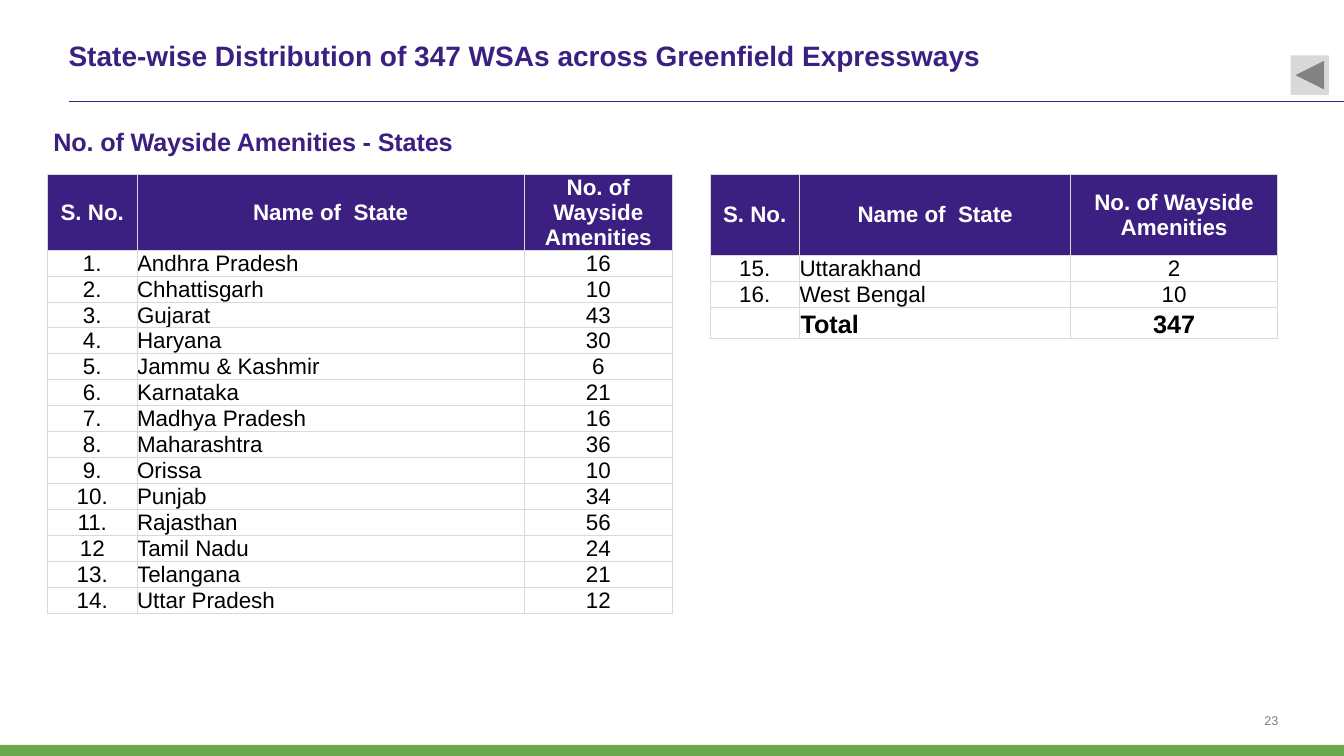
from lxml import etree
from pptx import Presentation
from pptx.dml.color import RGBColor
from pptx.enum import shapes, text
from pptx.oxml import ns
from pptx.util import Inches, Pt

PURPLE, GREEN, GRID, GREY = "3B2082", "6AA84F", "D9D9D9", "808080"
WHITE, BLACK = "FFFFFF", "000000"
LEFT, MID, RIGHT = text.PP_ALIGN.LEFT, text.PP_ALIGN.CENTER, text.PP_ALIGN.RIGHT
TOP, CENTER, BASE = text.MSO_ANCHOR.TOP, text.MSO_ANCHOR.MIDDLE, text.MSO_ANCHOR.BOTTOM

HEAD = ["S. No.", "Name of  State", "No. of Wayside Amenities"]
STATES = [
    ("Andhra Pradesh", 16), ("Chhattisgarh", 10), ("Gujarat", 43),
    ("Haryana", 30), ("Jammu & Kashmir", 6), ("Karnataka", 21),
    ("Madhya Pradesh", 16), ("Maharashtra", 36), ("Orissa", 10),
    ("Punjab", 34), ("Rajasthan", 56), ("Tamil Nadu", 24),
    ("Telangana", 21), ("Uttar Pradesh", 12), ("Uttarakhand", 2),
    ("West Bengal", 10),
]


def color(code):
    return RGBColor.from_string(code)


def paint(item, code):
    item.fill.solid()
    item.fill.fore_color.rgb = color(code)


def place(item, box):
    for key, size in zip(("left", "top", "width", "height"), box):
        setattr(item, key, Inches(size))


def write(frame, words, size, code, bold=False, align=LEFT):
    par = frame.paragraphs[0]
    par.alignment = align
    run = par.add_run()
    run.text = words
    look = {"name": "Arial", "size": Pt(size), "bold": bold}
    for key, value in look.items():
        setattr(run.font, key, value)
    run.font.color.rgb = color(code)
    return run


def setup(frame, anchor, inset=0):
    look = {"word_wrap": True, "auto_size": text.MSO_AUTO_SIZE.NONE,
            "vertical_anchor": anchor}
    look |= {f"margin_{side}": Inches(inset)
             for side in ("left", "top", "right", "bottom")}
    for key, value in look.items():
        setattr(frame, key, value)


def label(slide, box, anchor, inset=0):
    frame = slide.shapes.add_textbox(*map(Inches, box)).text_frame
    setup(frame, anchor, inset)
    return frame


def block(slide, kind, box, code):
    shape = slide.shapes.add_shape(kind, *map(Inches, box))
    shape.shadow.inherit = False
    paint(shape, code)
    shape.line.fill.background()
    return shape


def rule(slide, left, right, top):
    line = slide.shapes.add_connector(
        shapes.MSO_CONNECTOR.STRAIGHT,
        Inches(left), Inches(top), Inches(right), Inches(top))
    line.line.color.rgb = color(PURPLE)
    line.line.width = Pt(1)
    etree.SubElement(line._element.spPr, ns.qn("a:effectLst"))


def border(cell):
    props = cell._tc.get_or_add_tcPr()
    for side in ("lnL", "lnR", "lnT", "lnB"):
        edge = etree.SubElement(props, ns.qn(f"a:{side}"), w=str(Pt(0.5)))
        fill = etree.SubElement(edge, ns.qn("a:solidFill"))
        etree.SubElement(fill, ns.qn("a:srgbClr"), val=GRID)


def fill_cell(cell, words, row, col, total):
    head = row == 0
    pad = Inches(0.01 if head or col == 0 or total else 0)
    look = {"margin_left": pad, "margin_top": pad, "margin_right": pad,
            "margin_bottom": 0, "vertical_anchor": CENTER if head else BASE}
    for key, value in look.items():
        setattr(cell, key, value)
    border(cell)
    if head:
        paint(cell, PURPLE)
    else:
        cell.fill.background()
    if words:
        write(cell.text_frame, words, 18 if total else 16,
              WHITE if head else BLACK, head or total,
              LEFT if col == 1 and not head else MID)


def grid(slide, box, cols, top, rows):
    rows = [HEAD] + rows
    table = slide.shapes.add_table(
        len(rows), len(cols), *map(Inches, box)).table
    table.first_row = table.horz_banding = False
    for col, width in zip(table.columns, cols):
        col.width = Inches(width)
    for r, row in enumerate(rows):
        table.rows[r].height = Inches(0.21 if r else top)
        for c, words in enumerate(row):
            fill_cell(table.cell(r, c), words, r, c, row[1] == "Total")


def main():
    deck = Presentation()
    deck.slide_width, deck.slide_height = Inches(13.33), Inches(7.5)
    slide = deck.slides.add_slide(deck.slide_layouts[5])

    # Frame of the page
    rule(slide, 0.68, 13.33, 1.01)
    page = label(slide, (11.54, 7.03, 1.14, 0.19), BASE)
    write(page, "23", 9, GREY, align=RIGHT)
    block(slide, shapes.MSO_SHAPE.RECTANGLE, (0, 7.39, 13.33, 0.11), GREEN)

    # Headings
    title = slide.shapes.title
    place(title, (0.68, 0.12, 12.12, 0.86))
    setup(title.text_frame, CENTER)
    write(title.text_frame,
          "State-wise Distribution of 347 WSAs across Greenfield Expressways",
          20, PURPLE, True)
    sub = label(slide, (0.47, 1.19, 6.96, 0.38), TOP, 0.06)
    run = write(sub, "No. of Wayside Amenities - States", 18, PURPLE, True)
    run.font._element.set("spc", "-10")

    # Tables of states
    rows = [(f"{n}" if n == 12 else f"{n}.", name, str(count))
            for n, (name, count) in enumerate(STATES, 1)]
    total = ("", "Total", str(sum(count for _, count in STATES)))
    grid(slide, (0.47, 1.73, 6.2, 4.69), (0.89, 3.84, 1.47), 0.46, rows[:14])
    grid(slide, (7.04, 1.73, 5.63, 1.67), (0.89, 2.69, 2.05), 0.8,
         rows[14:] + [total])

    # Back button
    back = block(slide, shapes.MSO_SHAPE.ACTION_BUTTON_FORWARD_OR_NEXT,
                 (12.8, 0.55, 0.38, 0.39), GRID)
    back.rotation = 180

    deck.save("out.pptx")


if __name__ == "__main__":
    main()
